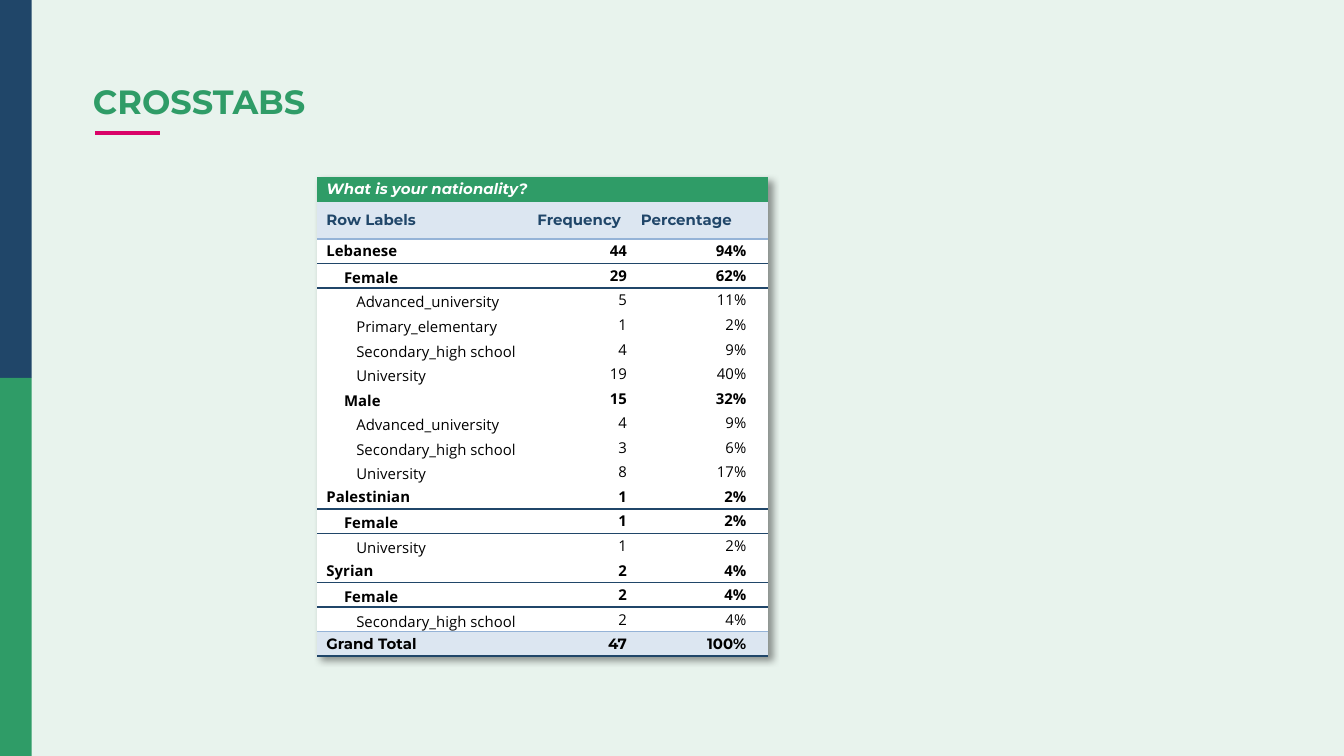
from lxml import etree
from pptx import Presentation
from pptx.dml.color import RGBColor
from pptx.enum import shapes, text
from pptx.oxml import ns
from pptx.util import Pt

NAVY = RGBColor(0x20, 0x46, 0x69)
GREEN = RGBColor(0x2F, 0x9C, 0x67)
PINK = RGBColor(0xD9, 0x03, 0x68)
MINT = RGBColor(0xE8, 0xF3, 0xED)
PALE_BLUE = RGBColor(0xDC, 0xE6, 0xF1)
RULE_BLUE = RGBColor(0x95, 0xB3, 0xD7)
WHITE = RGBColor(0xFF, 0xFF, 0xFF)
BLACK = RGBColor(0, 0, 0)

HEADING_FONT, BODY_FONT = "Montserrat", "Open Sans"
NO_GRID_STYLE = "{2D5ABB26-0587-4C30-8999-92F81FD0307C}"
LEFT, TOP = 169.9, 95
COLUMNS = [113, 55.5, 9, 64]
ROW, HEADER_ROW = 13.16, 19.8
INDENTS = [0, 9.4, 16]  # nationality, gender, education

# level, label, frequency, percentage
RESULTS = [
    (0, "Lebanese", 44, 94),
    (1, "Female", 29, 62),
    (2, "Advanced_university", 5, 11),
    (2, "Primary_elementary", 1, 2),
    (2, "Secondary_high school", 4, 9),
    (2, "University", 19, 40),
    (1, "Male", 15, 32),
    (2, "Advanced_university", 4, 9),
    (2, "Secondary_high school", 3, 6),
    (2, "University", 8, 17),
    (0, "Palestinian", 1, 2),
    (1, "Female", 1, 2),
    (2, "University", 1, 2),
    (0, "Syrian", 2, 4),
    (1, "Female", 2, 4),
    (2, "Secondary_high school", 2, 4),
    (0, "Grand Total", 47, 100),
]


def write(frame, words, size=8, font=BODY_FONT, color=BLACK, bold=True,
          italic=False, align=text.PP_ALIGN.LEFT, indent=0, spacing=None):
    paragraph = frame.paragraphs[0]
    paragraph.alignment = align
    paragraph.line_spacing = spacing
    if indent:
        properties = paragraph._p.get_or_add_pPr()
        properties.set("marL", str(Pt(indent)))
        properties.set("indent", "0")
    run = paragraph.add_run()
    run.text = words
    run.font.size, run.font.name = Pt(size), font
    run.font.bold, run.font.italic = bold, italic
    run.font.color.rgb = color


def add_block(slide, left, top, width, height, color):
    block = slide.shapes.add_shape(
        shapes.MSO_SHAPE.RECTANGLE, Pt(left), Pt(top), Pt(width), Pt(height))
    block.shadow.inherit = False
    block.fill.solid()
    block.fill.fore_color.rgb = color
    block.line.fill.background()
    return block


def cast_shadow(block):
    effects = block._element.spPr.find(ns.qn("a:effectLst"))
    shadow = etree.SubElement(
        effects, ns.qn("a:outerShdw"), blurRad=str(Pt(4)), dist=str(Pt(3)),
        dir="2700000", algn="tl", rotWithShape="0")
    color = etree.SubElement(shadow, ns.qn("a:srgbClr"), val=str(BLACK))
    etree.SubElement(color, ns.qn("a:alpha"), val="40000")


def add_title(slide, words):
    title = slide.shapes.add_textbox(Pt(49.7), Pt(42.5), Pt(620.6), Pt(26.9))
    frame = title.text_frame
    frame.word_wrap = True
    frame.margin_left = 0
    write(frame, words, size=18, font=HEADING_FONT, color=GREEN, spacing=0.9)
    underline = slide.shapes.add_connector(
        shapes.MSO_CONNECTOR.STRAIGHT, Pt(51), Pt(71.2), Pt(86), Pt(71.2))
    underline.line.color.rgb = PINK
    underline.line.width = Pt(2.25)
    etree.SubElement(underline._element.spPr, ns.qn("a:effectLst"))


def rule_row(cells, **edges):
    """Draw 1 pt rules; edges maps lnT and lnB to colours."""
    for cell in cells:
        properties = cell._tc.get_or_add_tcPr()
        for position, (edge, color) in enumerate(edges.items()):
            line = etree.Element(ns.qn("a:" + edge), w=str(Pt(1)))
            fill = etree.SubElement(line, ns.qn("a:solidFill"))
            etree.SubElement(fill, ns.qn("a:srgbClr"), val=str(color))
            properties.insert(position, line)


def fill_row(cells, color):
    for cell in cells:
        cell.fill.solid()
        cell.fill.fore_color.rgb = color


def add_grid(slide, row_count):
    height = ROW * (row_count - 1) + HEADER_ROW
    cast_shadow(add_block(slide, LEFT, TOP, sum(COLUMNS), height, WHITE))
    table = slide.shapes.add_table(
        row_count, len(COLUMNS), Pt(LEFT), Pt(TOP),
        Pt(sum(COLUMNS)), Pt(height)).table
    table.first_row = table.horz_banding = False
    table._tbl.tblPr.find(ns.qn("a:tableStyleId")).text = NO_GRID_STYLE
    for column, width in zip(table.columns, COLUMNS):
        column.width = Pt(width)
    for index, row in enumerate(table.rows):
        row.height = Pt(HEADER_ROW if index == 1 else ROW)
        for cell in row.cells:
            cell.fill.background()
            cell.margin_left = cell.margin_right = Pt(5)
            cell.margin_top = cell.margin_bottom = 0
            cell.vertical_anchor = text.MSO_ANCHOR.MIDDLE
            cell.text_frame.paragraphs[0].font.size = Pt(8)
    return table


def fill_result(cells, level, label, frequency, percentage, font):
    style = dict(font=font, bold=level < 2)
    if level:
        cells[0].vertical_anchor = text.MSO_ANCHOR.BOTTOM
    write(cells[0].text_frame, label, indent=INDENTS[level], **style)
    cells[1].merge(cells[2])
    for cell, value in ((cells[1], f"{frequency}"), (cells[3], f"{percentage}%")):
        cell.margin_right = Pt(11.5)
        write(cell.text_frame, value, align=text.PP_ALIGN.RIGHT, **style)


def add_crosstab(slide, question, headings):
    table = add_grid(slide, len(RESULTS) + 2)
    rows = [list(row.cells) for row in table.rows]
    banner, header, *body = rows

    banner[0].merge(banner[-1])
    fill_row(banner, GREEN)
    write(banner[0].text_frame, question, font=HEADING_FONT, color=WHITE,
          italic=True)

    header[2].merge(header[3])
    fill_row(header, PALE_BLUE)
    for cell, heading in zip(header, headings):
        write(cell.text_frame, heading, font=HEADING_FONT, color=NAVY)
    rule_row(header, lnB=RULE_BLUE)

    for cells, result in zip(body, RESULTS):
        is_total = cells is body[-1]
        fill_result(cells, *result, font=HEADING_FONT if is_total else BODY_FONT)
        if cells is body[0] or is_total:
            rule_row(cells, lnT=RULE_BLUE, lnB=NAVY)
        elif result[0] == 0:
            rule_row(cells, lnB=NAVY)
    for above, cells, result in zip(body, body[1:], RESULTS):
        if result[0] == 0:
            rule_row(cells, lnT=NAVY)
    rule_row(body[-2], lnB=RULE_BLUE)
    fill_row(body[-1], PALE_BLUE)


def main():
    deck = Presentation()
    deck.slide_width, deck.slide_height = Pt(720), Pt(405)
    slide = deck.slides.add_slide(deck.slide_layouts[6])
    slide.background.fill.solid()
    slide.background.fill.fore_color.rgb = MINT
    for top, color in ((0, NAVY), (202.5, GREEN)):
        add_block(slide, 0, top, 17, 202.5, color)
    add_title(slide, "CROSSTABS")
    add_crosstab(slide, "What is your nationality?",
                 ["Row Labels", "Frequency", "Percentage"])
    deck.save("out.pptx")


if __name__ == "__main__":
    main()
